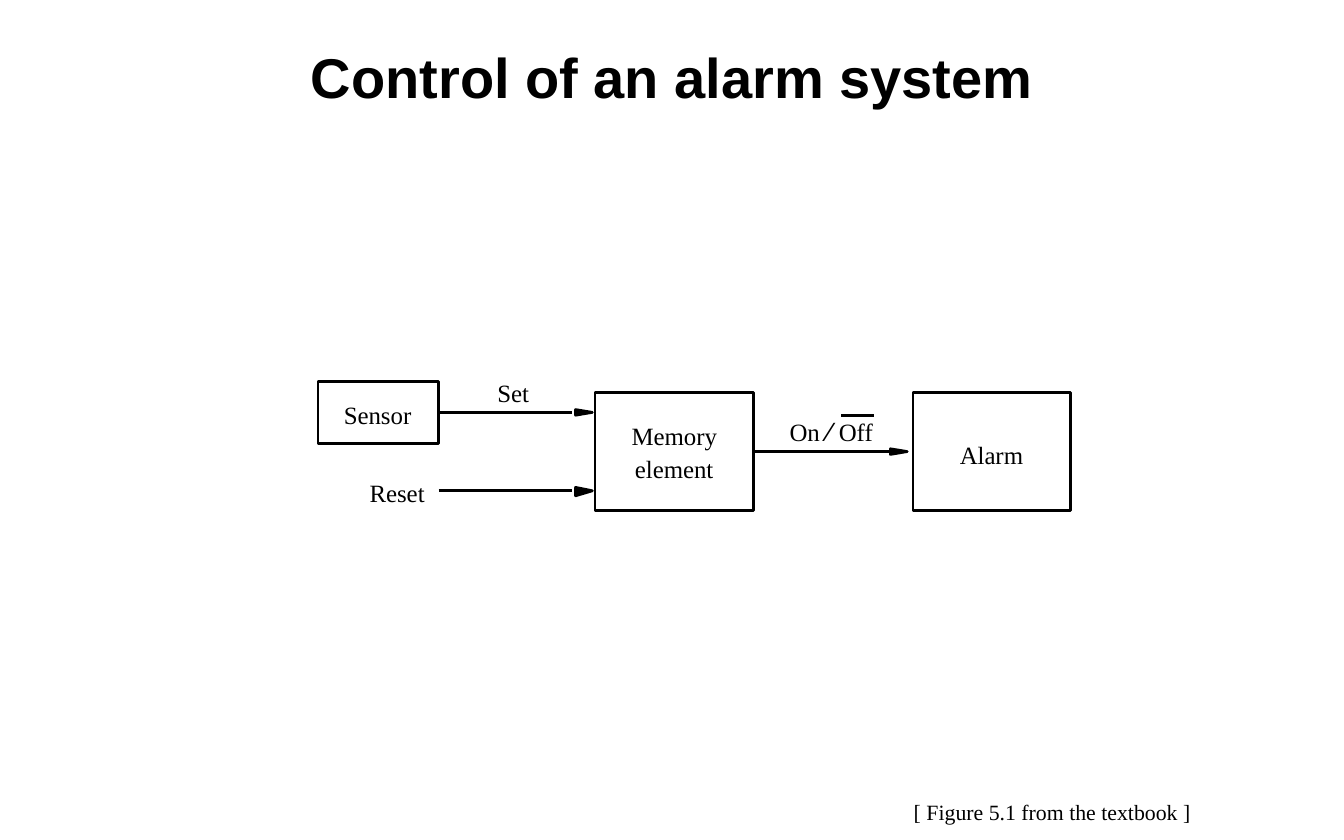
from lxml.etree import SubElement
from pptx import Presentation
from pptx.dml.color import RGBColor
from pptx.enum.shapes import MSO_CONNECTOR as CONN, MSO_SHAPE as SHAPE
from pptx.enum.text import MSO_ANCHOR as ANCHOR, MSO_AUTO_SIZE as AUTO, PP_ALIGN as ALIGN
from pptx.oxml.ns import qn
from pptx.util import Pt

BLACK, WHITE = "000000", "FFFFFF"
SERIF, SANS = "Times New Roman", "Arial"
LINE_WIDTH = 1.75
RIGHT = 3


def rgb(value):
    """Turn a hex string into a colour."""
    return RGBColor.from_string(value)


def style(sp, fill=None):
    """Give a shape a black outline, an optional fill and no shadow."""
    sp.shadow.inherit = False
    sp.line.color.rgb = rgb(BLACK)
    sp.line.width = Pt(LINE_WIDTH)
    if fill:
        sp.fill.solid()
        sp.fill.fore_color.rgb = rgb(fill)
    else:
        sp.fill.background()


def add_block(s, x, y, w, h, fill=None):
    """Add an outlined rectangle of the block diagram."""
    sp = s.shapes.add_shape(SHAPE.RECTANGLE, Pt(x), Pt(y), Pt(w), Pt(h))
    style(sp, fill)
    return sp


def add_line(s, x1, x2, y, source=None):
    """Add a horizontal line, joined to the right side of its source block."""
    line = s.shapes.add_connector(CONN.STRAIGHT, Pt(x1), Pt(y), Pt(x2), Pt(y))
    line.line.color.rgb = rgb(BLACK)
    line.line.width = Pt(LINE_WIDTH)
    SubElement(line._element.spPr, qn("a:effectLst"))
    if source:
        line.begin_connect(source, RIGHT)


def add_head(s, x, y, up=1.8, down=1.8):
    """Add a solid arrowhead 10.8 pt long whose tip is level with y."""
    builder = s.shapes.build_freeform(Pt(x), Pt(y + down))
    builder.add_line_segments([(Pt(x + 10.8), Pt(y)), (Pt(x), Pt(y - up))], close=True)
    style(builder.convert_to_shape(), BLACK)


def add_text(s, text, x, y, w, h, size=16, font=SERIF, inset=False):
    """Add a text box of one unwrapped line that fits its text."""
    box = s.shapes.add_textbox(Pt(x), Pt(y), Pt(w), Pt(h))
    tf = box.text_frame
    tf.word_wrap = False
    tf.auto_size = AUTO.SHAPE_TO_FIT_TEXT
    if not inset:
        tf.margin_left = tf.margin_right = tf.margin_top = tf.margin_bottom = 0
    p = tf.paragraphs[0]
    p.text = text
    p.font.size = Pt(size)
    p.font.name = font
    p.font.color.rgb = rgb(BLACK)
    return tf


def add_title(s, text):
    """Add the centred bold title."""
    tf = add_text(s, text, 72, 24, 720, 54, 36, SANS, inset=True)
    tf.word_wrap = True
    tf.auto_size = AUTO.NONE
    tf.vertical_anchor = ANCHOR.TOP
    tf.paragraphs[0].alignment = ALIGN.CENTER
    tf.paragraphs[0].font.bold = True


def main():
    """Build the alarm system slide."""
    prs = Presentation()
    prs.slide_width, prs.slide_height = Pt(864), Pt(540)
    s = prs.slides.add_slide(prs.slide_layouts[6])

    memory = add_block(s, 382.5, 252.5, 102, 75.6, WHITE)
    add_block(s, 587, 252.5, 101, 75.6, WHITE)
    sensor = add_block(s, 204.5, 245.3, 77.5, 39.6)

    add_line(s, 484.5, 572.4, 290.3, memory)
    add_head(s, 572.4, 290.3)
    add_line(s, 282, 368, 265.1, sensor)
    add_head(s, 370, 265.1)
    add_line(s, 282, 368, 315.5)
    add_head(s, 370, 315.5, 2.2, 3.2)
    add_line(s, 540.7, 561.6, 267)

    for text, x, y, w in (
        ("Memory", 406, 270.3, 58),
        ("element", 408.2, 291.4, 58),
        ("Alarm", 617, 282.7, 48),
        ("Sensor", 221, 257, 48),
        ("Reset", 237.6, 307.4, 42),
        ("Set", 319.7, 242.6, 26),
        ("On", 507.6, 267.8, 23),
        ("Off", 539.3, 267.8, 28),
    ):
        add_text(s, text, x, y, w, 19.4)
    add_text(s, "⁄", 532, 267, 7.2, 20.9, 17, SANS)

    add_text(s, "[ Figure 5.1 from the textbook ]", 580.3, 509.8, 193.7, 24.5, 14, inset=True)
    add_title(s, "Control of an alarm system")
    prs.save("out.pptx")


if __name__ == "__main__":
    main()
